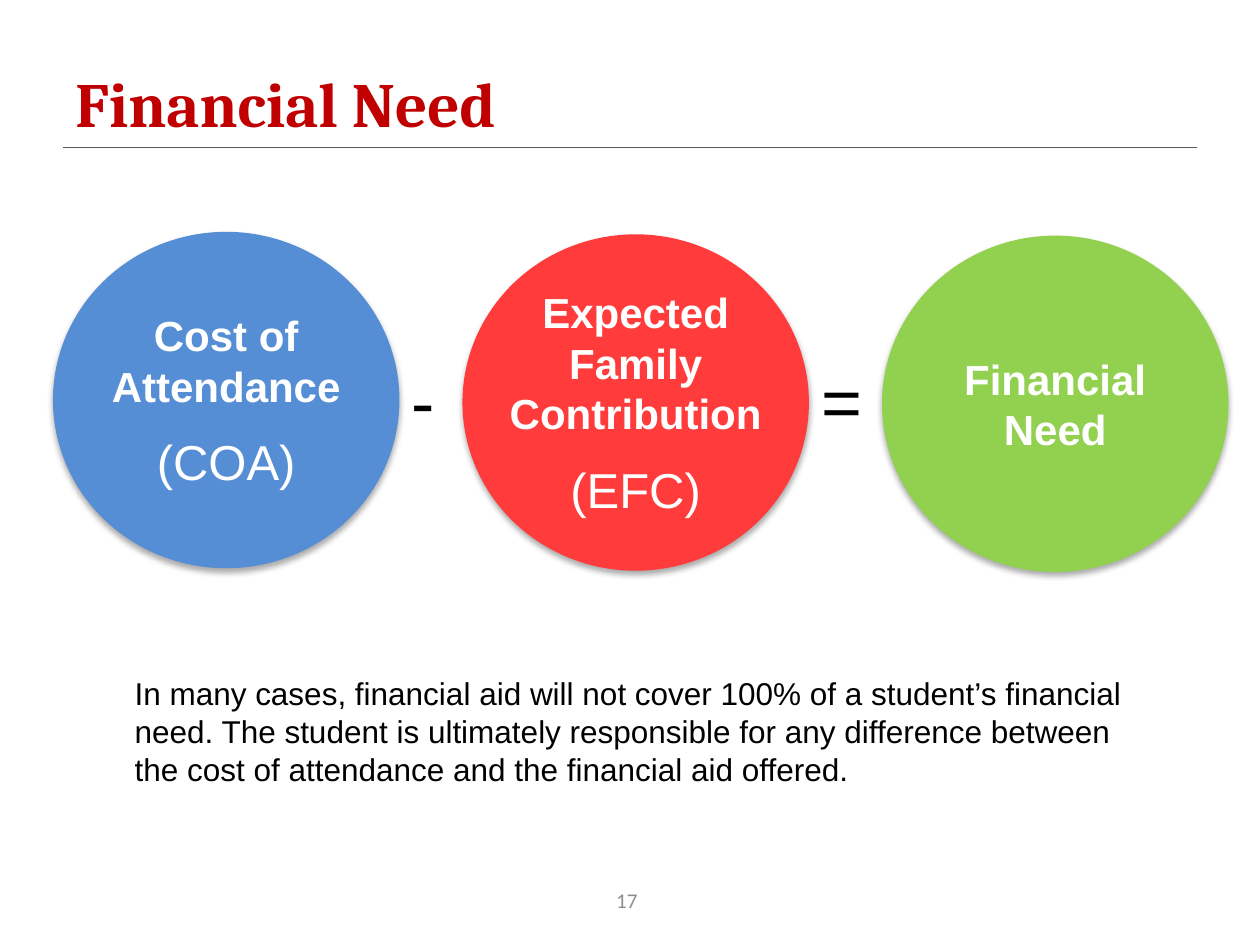
import pptx
import pptx.util
import pptx.dml.color
import pptx.enum.shapes
import pptx.enum.text
import pptx.oxml
import pptx.oxml.ns
from pptx.util import Inches

COLORS = {
    "title": "C00000", "rule": "595959", "text": "000000", "white": "FFFFFF",
    "cost": "558ED5", "family": "FF3B3B", "need": "92D050", "number": "8C8C8C",
}
ALIGN = pptx.enum.text.PP_ALIGN
ANCHOR = pptx.enum.text.MSO_ANCHOR
SHADOW = (
    f'<a:outerShdw {pptx.oxml.ns.nsdecls("a")} blurRad="44450" dist="27940" dir="5400000" '
    'algn="ctr" rotWithShape="0"><a:srgbClr val="000000"><a:alpha val="32000"/>'
    '</a:srgbClr></a:outerShdw>'
)


def rgb(name):
    """Return the named colour."""
    return pptx.dml.color.RGBColor.from_string(COLORS[name])


def style(para, size, color, bold=False, font="Arial", align=ALIGN.LEFT):
    """Format a paragraph and its runs."""
    para.alignment = align
    for span in para.runs:
        span.font.name = font
        span.font.size = pptx.util.Pt(size)
        span.font.bold = bold
        span.font.color.rgb = rgb(color)


def add_text(page, box, text, size, color, anchor=ANCHOR.TOP, **options):
    """Add a wrapped single-paragraph text box."""
    frame = page.shapes.add_textbox(*map(Inches, box)).text_frame
    frame.word_wrap = True
    frame.vertical_anchor = anchor
    frame.text = text
    style(frame.paragraphs[0], size, color, **options)


def add_header(page, box, title):
    """Place the title and the rule just below it."""
    left, top, width, height = box
    add_text(page, box, title, 36, "title", ANCHOR.MIDDLE, bold=True, font="Cambria")
    y = Inches(top + height + 0.05)
    rule = page.shapes.add_connector(
        pptx.enum.shapes.MSO_CONNECTOR.STRAIGHT, Inches(left), y, Inches(left + width), y)
    rule.line.color.rgb = rgb("rule")
    rule.line.width = pptx.util.Pt(0.75)
    properties = rule._element.spPr
    properties.append(properties.makeelement(pptx.oxml.ns.qn("a:effectLst"), {}))


def add_circle(page, box, color, lines, short):
    """Add a shadowed circle with a bold name and an optional abbreviation."""
    circle = page.shapes.add_shape(pptx.enum.shapes.MSO_SHAPE.OVAL, *map(Inches, box))
    circle.shadow.inherit = False
    circle.fill.solid()
    circle.fill.fore_color.rgb = rgb(color)
    circle.line.fill.background()
    effects = circle._element.spPr.find(pptx.oxml.ns.qn("a:effectLst"))
    effects.append(pptx.oxml.parse_xml(SHADOW))
    frame = circle.text_frame
    frame.word_wrap = False
    frame.vertical_anchor = ANCHOR.MIDDLE
    frame.text = "\n".join(lines)
    for para in frame.paragraphs:
        style(para, 24, "white", bold=True, align=ALIGN.CENTER)
    if short:
        para = frame.add_paragraph()
        para.text = short
        para.space_before = pptx.util.Pt(12)
        style(para, 28, "white", align=ALIGN.CENTER)


def add_equation(page, box):
    """Place the three circles and the operators after the first two."""
    left, top, width, height = box
    diameter = 2.75
    terms = [
        (0, 0, "cost", ["Cost of", "Attendance"], "(COA)", "-"),
        (3.25, 0.02, "family", ["Expected", "Family", "Contribution"], "(EFC)", "="),
        (width - diameter, 0.03, "need", ["Financial", "Need"], None, None),
    ]
    for x, y, color, lines, short, operator in terms:
        add_circle(page, (left + x, top + y, diameter, height), color, lines, short)
        if operator:
            add_text(page, (left + x + diameter, top + 0.95, 0.5, 0.77), operator, 40, "text")


def build_slide(page):
    """Build the financial need slide."""
    add_header(page, (0.5, 0.5, 9, 0.62), "Financial Need")
    add_equation(page, (0.42, 1.84, 9.33, 2.67))
    add_text(
        page, (0.97, 5.3, 8.06, 1.01),
        "In many cases, financial aid will not cover 100% of a student’s financial need. "
        "The student is ultimately responsible for any difference between the cost of "
        "attendance and the financial aid offered.", 18, "text")
    add_text(page, (4.06, 6.79, 1.83, 0.71), "17", 12, "number", ANCHOR.MIDDLE,
             font="Calibri", align=ALIGN.CENTER)


def main():
    """Create and save the deck."""
    deck = pptx.Presentation()
    deck.slide_width, deck.slide_height = Inches(10), Inches(7.5)
    build_slide(deck.slides.add_slide(deck.slide_layouts[6]))
    deck.save("out.pptx")


if __name__ == "__main__":
    main()
